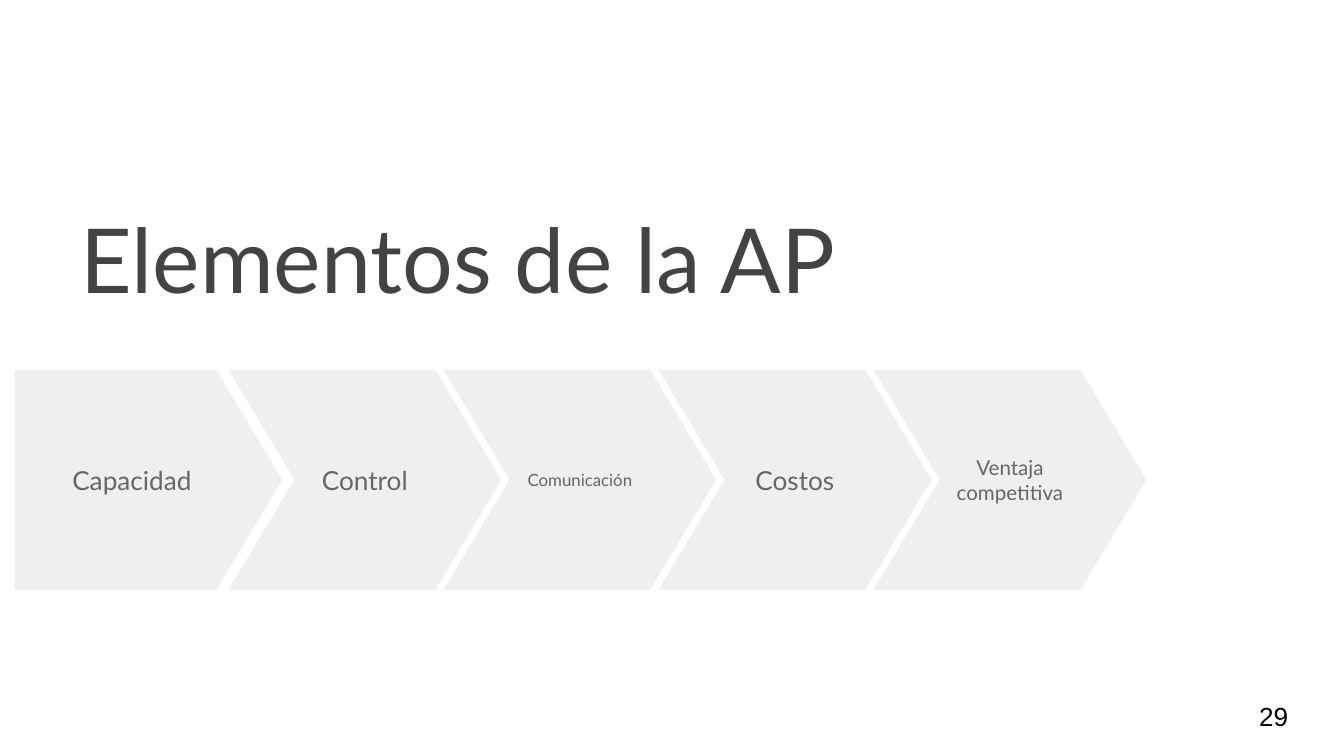
from pptx import Presentation
from pptx.dml.color import RGBColor
from pptx.enum.shapes import MSO_SHAPE
from pptx.enum.text import MSO_ANCHOR, PP_ALIGN
from pptx.util import Inches, Pt

COLORS = {"title": "434343", "step": "EFEFEF", "label": "666666", "number": "000000"}
STEPS = [("Capacidad", 14), ("Control", 14), ("Comunicación", 9),
         ("Costos", 14), ("Ventaja competitiva", 11)]
STEP_LEFT, STEP_PITCH, STEP_TOP, STEP_HEIGHT = 1.7, 1.6, 2.75, 1.64


def write(s, text, size, color, font="Lato", align=PP_ALIGN.LEFT, anchor=MSO_ANCHOR.MIDDLE):
    """Put one formatted paragraph into a shape."""
    tf = s.text_frame
    tf.word_wrap = True
    tf.vertical_anchor = anchor
    tf.margin_left = tf.margin_right = tf.margin_top = tf.margin_bottom = Inches(0.1)
    p = tf.paragraphs[0]
    p.alignment = align
    r = p.add_run()
    r.text = text
    r.font.size = Pt(size)
    r.font.name = font
    r.font.color.rgb = RGBColor.from_string(COLORS[color])


def add_text(slide, text, left, top, width, height, **fmt):
    """Add a text box with one paragraph."""
    s = slide.shapes.add_textbox(Inches(left), Inches(top), Inches(width), Inches(height))
    write(s, text, **fmt)


def add_step(slide, kind, text, size, left, width):
    """Add one arrow-shaped step of the process."""
    s = slide.shapes.add_shape(kind, Inches(left), Inches(STEP_TOP),
                               Inches(width), Inches(STEP_HEIGHT))
    s.adjustments[0] = 0.3
    s.shadow.inherit = False
    s.fill.solid()
    s.fill.fore_color.rgb = RGBColor.from_string(COLORS["step"])
    s.line.fill.background()
    write(s, text, size=size, color="label", align=PP_ALIGN.CENTER)


def main():
    """Build the slide and save it."""
    prs = Presentation()
    prs.slide_width, prs.slide_height = Inches(10), Inches(10 * 9 / 16)
    slide = prs.slides.add_slide(prs.slide_layouts[6])
    add_text(slide, "Elementos de la AP", 0.5, 1.48, 6.03, 0.94,
             size=48, color="title", anchor=MSO_ANCHOR.BOTTOM)
    add_text(slide, "29", 9.27, 5.11, 0.6, 0.43, size=14, color="number", font="Arial")
    first, *others = STEPS
    add_step(slide, MSO_SHAPE.PENTAGON, *first, left=0.11, width=1.99)
    for i, (text, size) in enumerate(others):
        add_step(slide, MSO_SHAPE.CHEVRON, text, size,
                 left=STEP_LEFT + i * STEP_PITCH, width=2.03)
    prs.save("out.pptx")


if __name__ == "__main__":
    main()
